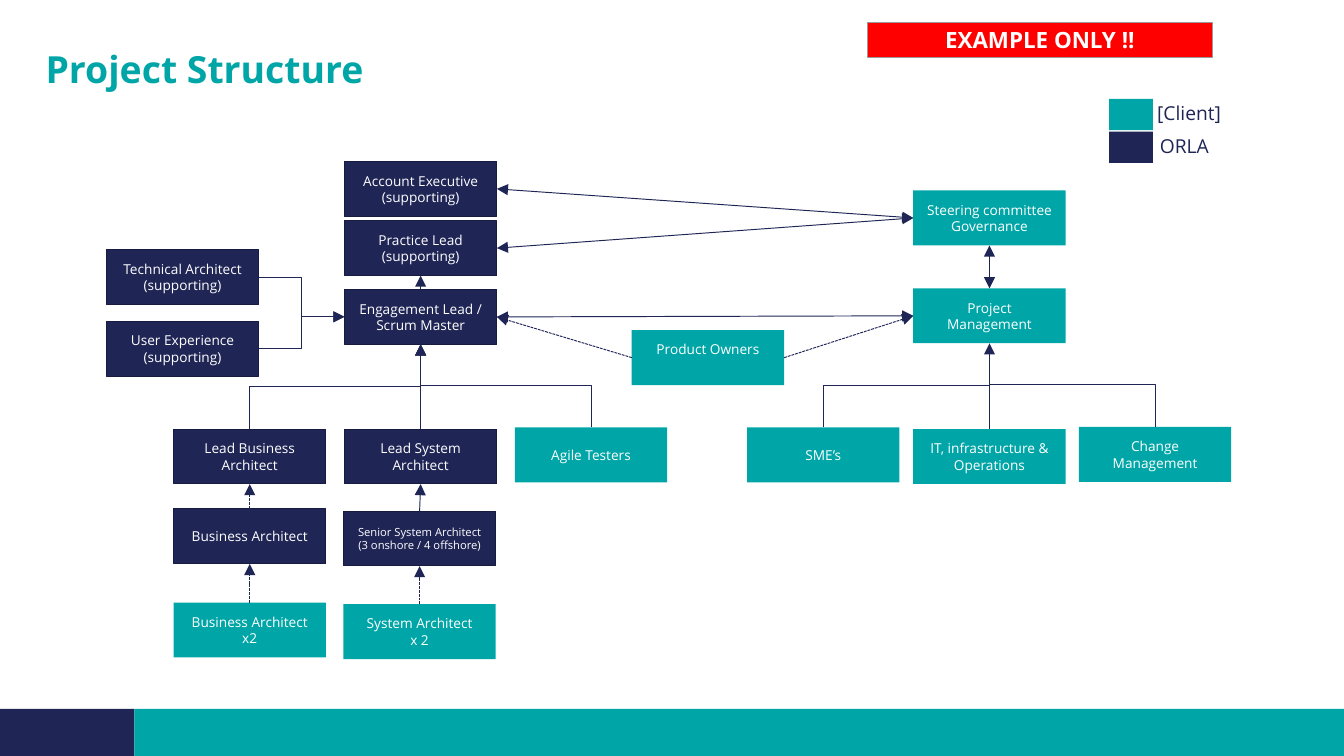
from dataclasses import dataclass

from lxml import etree
from pptx import Presentation
from pptx import util as u
from pptx.dml.color import RGBColor
from pptx.enum import dml, shapes, text
from pptx.oxml.ns import qn


@dataclass(frozen=True)
class Theme:
    font: str = "Open Sans"
    teal: str = "00A6A7"
    navy: str = "1F2555"
    navy_edge: str = "171B3F"
    red: str = "FF0000"
    grey: str = "9B9A98"
    white: str = "FFFFFF"
    title: float = 20
    banner: float = 12
    legend: float = 10.3
    role: float = 7.3
    small: float = 6
    line: float = 0.5


THEME = Theme()
ROLE_W, ROLE_H = 2.88, 1.04
SWATCH_W, SWATCH_H = 0.83, 0.59
TOP, LEFT, BOTTOM, RIGHT = range(4)

TITLE = "Project Structure"
BANNER = "EXAMPLE ONLY !!"
LEGEND = [("[Client]", THEME.teal, 21.87), ("ORLA", THEME.navy, 21.92)]
FOOTER = [(0, 2.54, THEME.navy), (2.54, 22.86, THEME.teal)]

SUPPLIER_ROLES = {
    "account": ("Account Executive\n(supporting)", 6.51, 3.05),
    "practice": ("Practice Lead\n(supporting)", 6.51, 4.17),
    "engagement": ("Engagement Lead / Scrum Master", 6.51, 5.47),
    "technical": ("Technical Architect\n(supporting)", 2.01, 4.72),
    "experience": ("User Experience\n(supporting)", 2.01, 6.07),
    "lead_business": ("Lead Business Architect", 3.28, 8.11),
    "lead_system": ("Lead System Architect", 6.51, 8.11),
    "business": ("Business Architect", 3.28, 9.62),
    "senior": ("Senior System Architect\v(3 onshore / 4 offshore)", 6.49, 9.66),
}
CLIENT_ROLES = {
    "steering": ("Steering committee\nGovernance", 17.26, 3.6),
    "project": ("Project Management", 17.26, 5.45),
    "owners": ("Product Owners", 11.94, 6.24),
    "testers": ("Agile Testers", 9.73, 8.08),
    "smes": ("SME’s", 14.12, 8.08),
    "operations": ("IT, infrastructure & Operations", 17.26, 8.11),
    "change": ("Change Management", 20.39, 8.07),
    "business_x2": ("Business Architect\nx2", 3.28, 11.39),
    "system_x2": ("System Architect\vx 2", 6.49, 11.42),
}

TWO_WAY = [
    ("account", RIGHT, "steering", LEFT),
    ("practice", RIGHT, "steering", LEFT),
    ("engagement", RIGHT, "project", LEFT),
    ("project", TOP, "steering", BOTTOM),
]
ONE_WAY = [
    ("engagement", TOP, "practice", BOTTOM),
    ("lead_system", TOP, "engagement", BOTTOM),
    ("senior", TOP, "lead_system", BOTTOM),
    ("operations", TOP, "project", BOTTOM),
]
DASHED = [
    ("owners", LEFT, "engagement", RIGHT),
    ("owners", RIGHT, "project", LEFT),
    ("business", TOP, "lead_business", BOTTOM),
    ("business_x2", TOP, "business", BOTTOM),
    ("system_x2", TOP, "senior", BOTTOM),
]
SIDE_BRANCHES = [("technical", "engagement"), ("experience", "engagement")]
RISING_BRANCHES = [("lead_business", "engagement"), ("testers", "engagement")]
JOINING_BRANCHES = [("smes", "project"), ("change", "project")]
JOIN_RISE = 0.8

deck = Presentation()
deck.slide_width, deck.slide_height = u.Cm(25.4), u.Cm(14.29)
slide = deck.slides.add_slide(deck.slide_layouts[5])


def rgb(value):
    return RGBColor.from_string(value)


def style(paragraph, size, color, bold=False):
    paragraph.font.name = THEME.font
    paragraph.font.size = u.Pt(size)
    paragraph.font.bold = bold
    paragraph.font.color.rgb = rgb(color)


def clear_margins(frame):
    frame.margin_left = frame.margin_right = frame.margin_top = frame.margin_bottom = 0


def add_box(left, top, width, height, fill, edge=None):
    box = slide.shapes.add_shape(
        shapes.MSO_SHAPE.RECTANGLE, *map(u.Cm, (left, top, width, height)))
    box.shadow.inherit = False
    box.fill.solid()
    box.fill.fore_color.rgb = rgb(fill)
    if edge:
        box.line.color.rgb = rgb(edge)
        box.line.width = u.Pt(THEME.line)
    else:
        box.line.fill.background()
    return box


def write(box, words, size, bold=False):
    frame = box.text_frame
    frame.text = words
    frame.word_wrap = True
    frame.vertical_anchor = text.MSO_ANCHOR.MIDDLE
    for paragraph in frame.paragraphs:
        paragraph.alignment = text.PP_ALIGN.CENTER
        style(paragraph, size, THEME.white, bold)


def add_line(kind, start, end, ends=("tailEnd",), dashed=False):
    connector = slide.shapes.add_connector(kind, *map(int, (*start, *end)))
    connector.line.color.rgb = rgb(THEME.navy)
    connector.line.width = u.Pt(THEME.line)
    if dashed:
        connector.line.dash_style = dml.MSO_LINE.SQUARE_DOT
    properties = connector.element.spPr
    for name in ends:
        etree.SubElement(properties.find(qn("a:ln")), qn(f"a:{name}"), type="triangle")
    etree.SubElement(properties, qn("a:effectLst"))
    return connector


def side(box, index):
    across, down = [(0.5, 0), (0, 0.5), (0.5, 1), (1, 0.5)][index]
    return box.left + box.width * across, box.top + box.height * down


def add_link(link, **look):
    source, source_side, target, target_side = link
    start, end = roles[source], roles[target]
    connector = add_line(shapes.MSO_CONNECTOR.STRAIGHT, side(start, source_side),
                         side(end, target_side), **look)
    connector.begin_connect(start, source_side)
    connector.end_connect(end, target_side)


def add_rising_elbow(start, end, **look):
    (x1, y1), (x2, y2) = start, end
    run, rise = abs(x2 - x1), abs(y2 - y1)
    left, top = (x1 + x2 - rise) / 2, (y1 + y2 - run) / 2
    elbow = add_line(shapes.MSO_CONNECTOR.ELBOW, (left, top),
                     (left + rise, top + run), **look)
    frame = elbow.element.spPr.find(qn("a:xfrm"))
    frame.set("rot", str(270 * 60000))
    if x2 < x1:
        frame.set("flipV", "1")
    return elbow


for left, width, color in FOOTER:
    add_box(left, 13.4, width, 0.89, color)

title = slide.shapes.title
title.left, title.top, title.width, title.height = map(u.Cm, (0.86, 0.38, 23.77, 1.35))
heading = title.text_frame
heading.text = TITLE
heading.auto_size = text.MSO_AUTO_SIZE.NONE
heading.vertical_anchor = text.MSO_ANCHOR.BOTTOM
clear_margins(heading)
heading.paragraphs[0].alignment = text.PP_ALIGN.LEFT
heading.paragraphs[0].line_spacing = 0.9
style(heading.paragraphs[0], THEME.title, THEME.teal, True)

for row, (party, color, left) in enumerate(LEGEND):
    top = 1.87 + row * 0.62
    add_box(20.96, top, SWATCH_W, SWATCH_H, color)
    label = slide.shapes.add_textbox(*map(u.Cm, (left, top, 2, SWATCH_H))).text_frame
    label.text = party
    label.word_wrap = True
    label.vertical_anchor = text.MSO_ANCHOR.MIDDLE
    clear_margins(label)
    label.paragraphs[0].line_spacing = 0.9
    style(label.paragraphs[0], THEME.legend, THEME.navy)

roles = {}
for group, fill, edge in ((SUPPLIER_ROLES, THEME.navy, THEME.navy_edge),
                          (CLIENT_ROLES, THEME.teal, None)):
    for key, (words, left, top) in group.items():
        roles[key] = add_box(left, top, ROLE_W, ROLE_H, fill, edge)
        write(roles[key], words, THEME.small if key == "senior" else THEME.role)
roles["owners"].text_frame.margin_bottom = u.Cm(0.45)

for link in TWO_WAY:
    add_link(link, ends=("headEnd", "tailEnd"))
for link in ONE_WAY:
    add_link(link)
for link in DASHED:
    add_link(link, dashed=True)
for source, target in SIDE_BRANCHES:
    add_line(shapes.MSO_CONNECTOR.ELBOW, side(roles[source], RIGHT), side(roles[target], LEFT))
for source, target in RISING_BRANCHES:
    add_rising_elbow(side(roles[source], TOP), side(roles[target], BOTTOM))
for source, target in JOINING_BRANCHES:
    start = side(roles[source], TOP)
    joint = side(roles[target], BOTTOM)[0], start[1] - u.Cm(JOIN_RISE)
    elbow = add_rising_elbow(start, joint, ends=())
    elbow.element.spPr.find(qn("a:prstGeom")).set("prst", "bentConnector2")

write(add_box(16.4, 0.43, 6.51, 0.65, THEME.red, THEME.grey), BANNER, THEME.banner, True)

deck.save("out.pptx")
